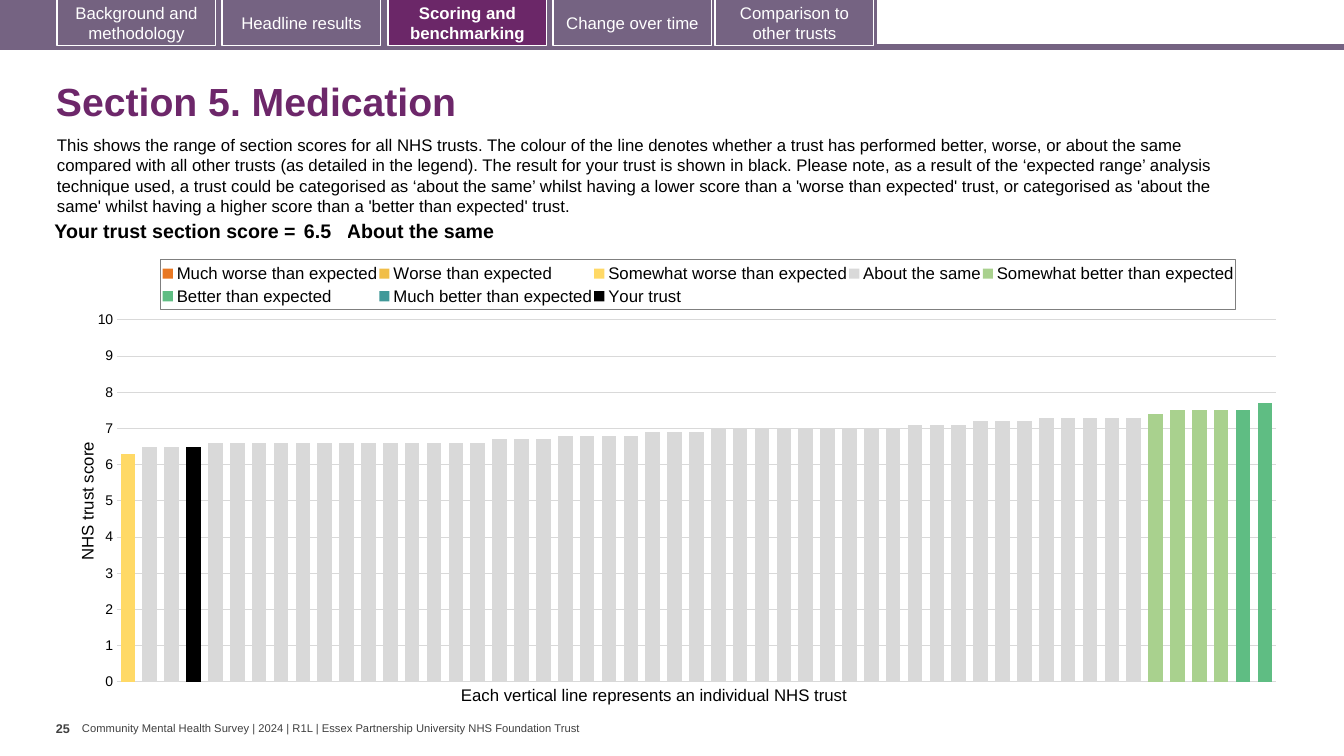
from copy import deepcopy
from dataclasses import dataclass

from pptx import Presentation
from pptx.chart.chart import Chart
from pptx.chart.data import CategoryChartData
from pptx.dml.color import RGBColor
from pptx.enum.chart import XL_CHART_TYPE as ChartType
from pptx.enum.chart import XL_LEGEND_POSITION as LegendPosition
from pptx.enum.chart import XL_TICK_MARK as TickMark
from pptx.enum.shapes import MSO_SHAPE as Preset
from pptx.enum.text import MSO_ANCHOR as Anchor
from pptx.enum.text import PP_ALIGN as Align
from pptx.oxml import parse_xml
from pptx.oxml.ns import nsdecls, qn
from pptx.slide import Slide
from pptx.text.text import Font, TextFrame
from pptx.util import Emu, Pt

EMU_PER_PX = 914400 / 100.8
FONT = "Arial"
BLACK = RGBColor(0x00, 0x00, 0x00)
WHITE = RGBColor(0xFF, 0xFF, 0xFF)
DARK_GREY = RGBColor(0x40, 0x40, 0x40)
GRID_GREY = RGBColor(0xD9, 0xD9, 0xD9)
BAND_PURPLE = RGBColor(0x75, 0x63, 0x82)
TAB_PURPLE = RGBColor(0x74, 0x62, 0x80)
ACTIVE_PURPLE = RGBColor(0x6B, 0x27, 0x68)
TITLE_PURPLE = RGBColor(0x6D, 0x27, 0x6A)
TRUST_COUNT = 53


@dataclass(frozen=True)
class Box:
    left: int
    top: int
    width: int
    height: int

    def emu(self) -> tuple[Emu, Emu, Emu, Emu]:
        return px(self.left), px(self.top), px(self.width), px(self.height)


@dataclass(frozen=True)
class Panel:
    box: Box
    fill: RGBColor | None
    label: str = ""
    bold: bool = False


@dataclass(frozen=True)
class Rating:
    name: str
    color: RGBColor
    first: int = 0
    scores: tuple[float, ...] = ()

    def values(self) -> list[float | None]:
        after = TRUST_COUNT - self.first - len(self.scores)
        return [None] * self.first + list(self.scores) + [None] * after


CHART_BOX = Box(68, 249, 1225, 448)
PLOT_BOX = Box(49, 71, 1159, 362)
LEGEND_BOX = Box(93, 11, 1075, 50)
AXIS_TITLE_BOX = Box(6, 190, 18, 120)

PANELS = [
    Panel(Box(0, 44, 1344, 6), BAND_PURPLE),
    Panel(Box(0, 0, 877, 47), BAND_PURPLE),
    Panel(Box(57, -1, 159, 47), TAB_PURPLE, "Background and methodology"),
    Panel(Box(222, -1, 159, 47), None, "Headline results"),
    Panel(Box(388, -1, 159, 47), ACTIVE_PURPLE, "Scoring and benchmarking", True),
    Panel(Box(553, -1, 159, 47), BAND_PURPLE, "Change over time"),
    Panel(Box(715, -1, 159, 47), BAND_PURPLE, "Comparison to other trusts"),
]

SAME_SCORES = (
    (6.5,) * 3 + (6.6,) * 13 + (6.7,) * 3 + (6.8,) * 4 + (6.9,) * 3
    + (7.0,) * 9 + (7.1,) * 3 + (7.2,) * 3 + (7.3,) * 5
)
RATINGS = [
    Rating("Much worse than expected", RGBColor(0xE8, 0x77, 0x22)),
    Rating("Worse than expected", RGBColor(0xF1, 0xBE, 0x48)),
    Rating("Somewhat worse than expected", RGBColor(0xFF, 0xD9, 0x66), 0, (6.3,)),
    Rating("About the same", GRID_GREY, 1, SAME_SCORES),
    Rating("Somewhat better than expected", RGBColor(0xA9, 0xD1, 0x8E), 47, (7.4, 7.5, 7.5, 7.5)),
    Rating("Better than expected", RGBColor(0x5F, 0xBD, 0x83), 51, (7.5, 7.7)),
    Rating("Much better than expected", RGBColor(0x41, 0x99, 0x99)),
    Rating("Your trust", BLACK, 3, (6.5,)),
]

INTRODUCTION = (
    "This shows the range of section scores for all NHS trusts. The colour of the line denotes "
    "whether a trust has performed better, worse, or about the same compared with all other trusts "
    "(as detailed in the legend). The result for your trust is shown in black. Please note, as a "
    "result of the ‘expected range’ analysis technique used, a trust could be categorised as ‘about "
    "the same’ whilst having a lower score than a 'worse than expected' trust, or categorised as "
    "'about the same' whilst having a higher score than a 'better than expected' trust."
)
FOOTER = "Community Mental Health Survey | 2024 | R1L | Essex Partnership University NHS Foundation Trust"


def px(length: int) -> Emu:
    return Emu(round(length * EMU_PER_PX))


def style_font(font: Font, size: int, color: RGBColor = BLACK, bold: bool = False) -> None:
    font.name, font.size, font.bold = FONT, Pt(size), bold
    font.color.rgb = color


def write(frame: TextFrame, text: str, *, size: int = 12, color: RGBColor = BLACK,
          bold: bool = False, align: Align = Align.LEFT, spacing: float = 1.0) -> None:
    paragraph = frame.paragraphs[0]
    paragraph.alignment, paragraph.line_spacing = align, spacing
    run = paragraph.add_run()
    run.text = text
    style_font(run.font, size, color, bold)


def add_text(slide: Slide, box: Box, text: str, *, inset: tuple[int, int] = (10, 5),
             wrap: bool = False, anchor: Anchor = Anchor.TOP, **text_format) -> None:
    frame = slide.shapes.add_textbox(*box.emu()).text_frame
    frame.word_wrap, frame.vertical_anchor = wrap, anchor
    frame.margin_left = frame.margin_right = px(inset[0])
    frame.margin_top = frame.margin_bottom = px(inset[1])
    write(frame, text, **text_format)


def add_panel(slide: Slide, panel: Panel) -> None:
    shape = slide.shapes.add_shape(Preset.RECTANGLE, *panel.box.emu())
    shape.shadow.inherit = False
    if panel.fill is None:
        shape.fill.background()
    else:
        shape.fill.solid()
        shape.fill.fore_color.rgb = panel.fill
    if not panel.label:
        shape.line.fill.background()
        return
    shape.line.color.rgb, shape.line.width = WHITE, Pt(0.75)
    shape.text_frame.vertical_anchor = Anchor.MIDDLE
    write(shape.text_frame, panel.label, color=WHITE, bold=panel.bold, align=Align.CENTER)


def place(parent, index: int, box: Box, target: str = "", sized: bool = True) -> None:
    for layout in parent.findall(qn("c:layout")):
        parent.remove(layout)
    fractions = {"x": box.left / CHART_BOX.width, "y": box.top / CHART_BOX.height}
    if sized:
        fractions |= {"w": box.width / CHART_BOX.width, "h": box.height / CHART_BOX.height}
    sizes = "".join(f'<c:{key} val="{value:.4f}"/>' for key, value in fractions.items())
    parent.insert(index, parse_xml(
        f'<c:layout {nsdecls("c")}><c:manualLayout>{target}<c:xMode val="edge"/>'
        f'<c:yMode val="edge"/>{sizes}</c:manualLayout></c:layout>'))


def move_last_series_to_right_axis(plot_area) -> None:
    columns = plot_area.find(qn("c:barChart"))
    right_columns = deepcopy(columns)
    columns.remove(columns.findall(qn("c:ser"))[-1])
    for series in right_columns.findall(qn("c:ser"))[:-1]:
        right_columns.remove(series)
    columns.addnext(right_columns)
    category_axis, value_axis = (plot_area.find(qn(tag)) for tag in ("c:catAx", "c:valAx"))
    right_category, right_value = deepcopy(category_axis), deepcopy(value_axis)
    for tag in ("c:title", "c:majorGridlines"):
        right_value.remove(right_value.find(qn(tag)))
    for tag, setting in (("c:axPos", "r"), ("c:majorTickMark", "out"),
                         ("c:tickLblPos", "none"), ("c:crosses", "max")):
        right_value.find(qn(tag)).set("val", setting)
    for axis, own, crossing in ((right_category, "5001", "5002"), (right_value, "5002", "5001")):
        axis.find(qn("c:axId")).set("val", own)
        axis.find(qn("c:crossAx")).set("val", crossing)
    for reference, number in zip(right_columns.findall(qn("c:axId")), ("5001", "5002")):
        reference.set("val", number)
    value_axis.addnext(right_value)
    right_value.addnext(right_category)


def format_legend(chart: Chart) -> None:
    chart.has_legend = True
    legend = chart.legend
    legend.position, legend.include_in_layout = LegendPosition.TOP, False
    style_font(legend.font, 12)
    element = chart._chartSpace.chart.find(qn("c:legend"))
    element.find(qn("c:txPr")).addprevious(parse_xml(
        f'<c:spPr {nsdecls("c", "a")}><a:ln w="9525"><a:solidFill>'
        '<a:srgbClr val="7F7F7F"/></a:solidFill></a:ln></c:spPr>'))
    place(element, 1, LEGEND_BOX)


def add_score_chart(slide: Slide) -> None:
    data = CategoryChartData()
    data.categories = [str(number) for number in range(1, TRUST_COUNT + 1)]
    for rating in RATINGS:
        data.add_series(rating.name, rating.values())
    chart = slide.shapes.add_chart(ChartType.COLUMN_CLUSTERED, *CHART_BOX.emu(), data).chart
    chart.has_title = False
    style_font(chart.font, 10)
    chart.font.name = "Calibri"
    plot = chart.plots[0]
    plot.gap_width, plot.overlap, plot.vary_by_categories = 50, 100, False
    for series, rating in zip(plot.series, RATINGS):
        series.format.fill.solid()
        series.format.fill.fore_color.rgb = rating.color
    chart.category_axis.visible = False
    axis = chart.value_axis
    axis.minimum_scale, axis.maximum_scale, axis.major_unit = 0, 10, 1
    axis.major_tick_mark = axis.minor_tick_mark = TickMark.NONE
    axis.format.line.fill.background()
    axis.major_gridlines.format.line.color.rgb = GRID_GREY
    axis.major_gridlines.format.line.width = Pt(0.75)
    style_font(axis.tick_labels.font, 10)
    write(axis.axis_title.text_frame, "NHS trust score", align=Align.CENTER)
    plot_area = chart._chartSpace.chart.plotArea
    place(plot_area.find(qn("c:valAx")).find(qn("c:title")), 1, AXIS_TITLE_BOX, sized=False)
    format_legend(chart)
    move_last_series_to_right_axis(plot_area)
    place(plot_area, 0, PLOT_BOX, target='<c:layoutTarget val="inner"/>')


def add_score_table(slide: Slide) -> None:
    columns = [("Your trust section score =", 265, 4, Align.RIGHT),
               ("6.5", 47, 4, Align.LEFT), ("About the same", 866, 0, Align.LEFT)]
    table = slide.shapes.add_table(1, len(columns), *Box(35, 217, 1178, 22).emu()).table
    table.first_row = table.horz_banding = False
    for index, (text, width, inset, align) in enumerate(columns):
        table.columns[index].width = px(width)
        cell = table.cell(0, index)
        cell.fill.background()
        cell.margin_left = cell.margin_right = px(inset)
        cell.margin_top = cell.margin_bottom = px(4)
        write(cell.text_frame, text, size=14, bold=True, align=align)


def main() -> None:
    presentation = Presentation()
    presentation.slide_width, presentation.slide_height = px(1344), px(756)
    slide = presentation.slides.add_slide(presentation.slide_layouts[6])
    add_text(slide, Box(82, 722, 505, 13), FOOTER, inset=(0, 0), anchor=Anchor.MIDDLE,
             size=8, color=DARK_GREY)
    for panel in PANELS:
        add_panel(slide, panel)
    add_text(slide, Box(46, 67, 1259, 73), "Section 5. Medication", wrap=True,
             anchor=Anchor.MIDDLE, size=28, color=TITLE_PURPLE, bold=True, spacing=0.9)
    add_text(slide, Box(56, 716, 25, 40), "25", inset=(0, 5), size=9, color=DARK_GREY, bold=True)
    add_text(slide, Box(47, 130, 1223, 92), INTRODUCTION, wrap=True)
    add_text(slide, Box(451, 680, 414, 30), "Each vertical line represents an individual NHS trust")
    add_score_chart(slide)
    add_score_table(slide)
    presentation.save("out.pptx")


if __name__ == "__main__":
    main()
